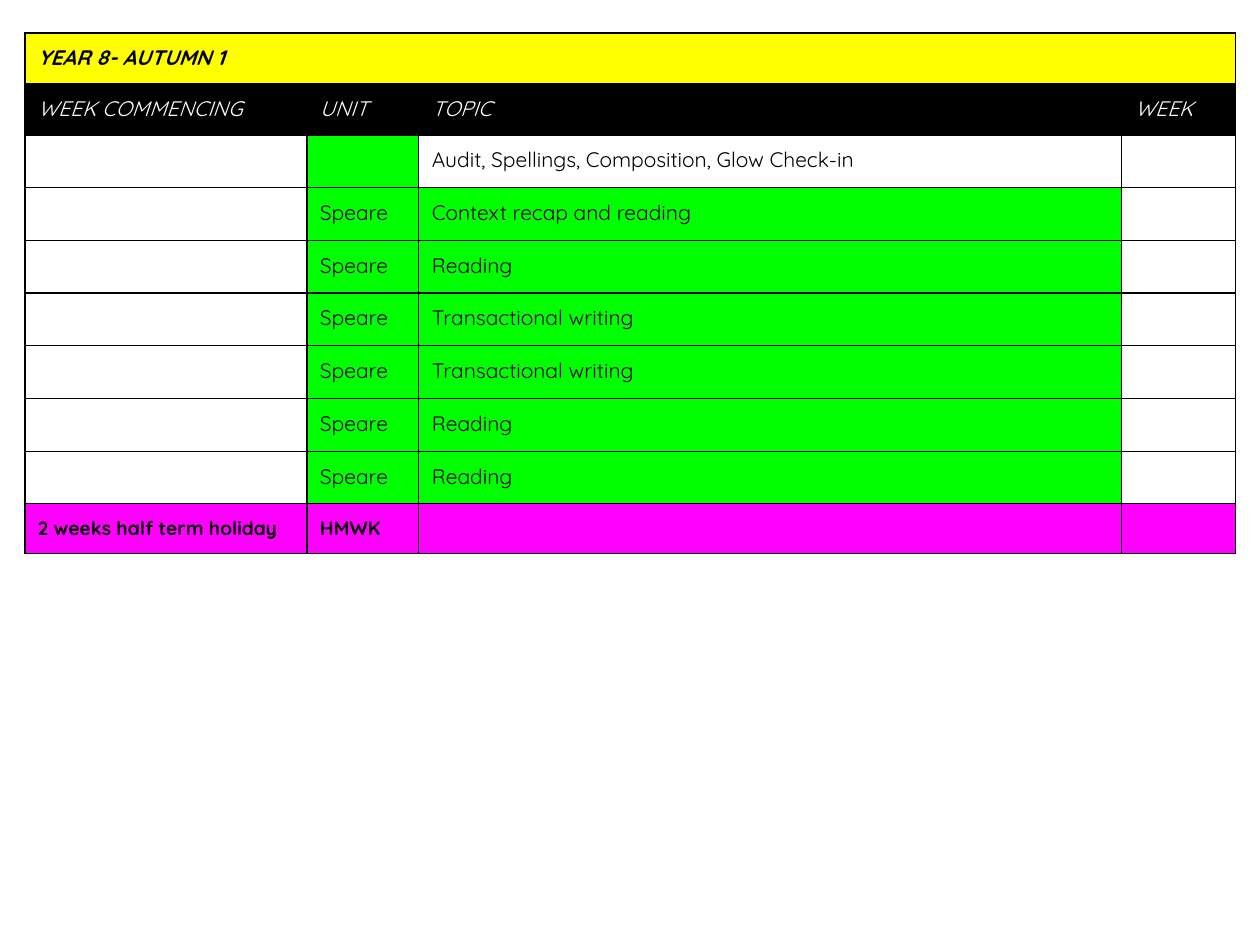
from dataclasses import dataclass

from lxml import etree
from pptx import Presentation
from pptx.dml.color import RGBColor
from pptx.oxml.ns import qn
from pptx.util import Emu, Pt

PX_PER_INCH = 126
BLANK_LAYOUT = 6


@dataclass(frozen=True)
class Theme:
    font: str = "Quicksand"
    black: str = "000000"
    white: str = "FFFFFF"
    yellow: str = "FFFF00"
    green: str = "00FF00"
    magenta: str = "FF00FF"
    body_size: float = 12
    holiday_size: float = 11
    border_width: float = 0.75


THEME = Theme()
COLUMN_WIDTHS = [282, 112, 703, 114]
TITLE_HEIGHT, HEADER_HEIGHT, HOLIDAY_HEIGHT = 51, 51, 50
SIDE_MARGIN, TEXT_MARGIN = 13, 12

TITLE = "YEAR 8- AUTUMN 1"
HEADERS = ["WEEK COMMENCING", "UNIT", "TOPIC", "WEEK"]
FIRST_TOPIC = "Audit, Spellings, Composition, Glow Check-in"
UNIT = "Speare"
TOPICS = ["Context recap and reading", "Reading", "Transactional writing",
          "Transactional writing", "Reading", "Reading"]
HOLIDAY = ["2 weeks half term holiday", "HMWK", "", ""]

# Text formats by type of row
TITLE_FORMAT = {"size": Pt(THEME.body_size), "bold": True, "italic": True}
HEADER_FORMAT = {"size": Pt(THEME.body_size), "bold": False, "italic": True}
WEEK_FORMAT = {"size": Pt(THEME.body_size), "bold": False, "italic": False}
HOLIDAY_FORMAT = {"size": Pt(THEME.holiday_size), "bold": True, "italic": False}


def px(n):
    return Emu(round(n * 914400 / PX_PER_INCH))


def add_borders(cell):
    """Draw a thin black line on all four sides of a cell."""
    tcPr = cell._tc.get_or_add_tcPr()
    for i, side in enumerate(("lnL", "lnR", "lnT", "lnB")):
        line = etree.Element(qn(f"a:{side}"), w=str(Pt(THEME.border_width)))
        fill = etree.SubElement(line, qn("a:solidFill"))
        etree.SubElement(fill, qn("a:srgbClr"), val=THEME.black)
        tcPr.insert(i, line)


def fill_cell(cell, text, fill, color, text_format):
    if fill:
        cell.fill.solid()
        cell.fill.fore_color.rgb = RGBColor.from_string(fill)
    else:
        cell.fill.background()
    add_borders(cell)

    # Empty cells need no vertical margin, so they never stretch their row
    cell.margin_left = cell.margin_right = px(SIDE_MARGIN)
    cell.margin_top = cell.margin_bottom = px(TEXT_MARGIN if text else 0)
    if text:
        r = cell.text_frame.paragraphs[0].add_run()
        r.text = text
        r.font.name = THEME.font
        r.font.color.rgb = RGBColor.from_string(color)
        for name, value in text_format.items():
            setattr(r.font, name, value)


def schedule_rows():
    """List each row as texts, fills, text colour and text format."""
    t = THEME
    week_fills = [None, t.green, t.green, None]
    rows = [
        ([TITLE, "", "", ""], [t.yellow] * 4, t.black, TITLE_FORMAT),
        (HEADERS, [t.black] * 4, t.white, HEADER_FORMAT),
        (["", "", FIRST_TOPIC, ""], [None, t.green, t.white, None],
         t.black, WEEK_FORMAT),
    ]
    rows += [(["", UNIT, topic, ""], week_fills, t.black, WEEK_FORMAT)
             for topic in TOPICS]
    rows.append((HOLIDAY, [t.magenta] * 4, t.black, HOLIDAY_FORMAT))
    return rows


def add_schedule(s, left, top, width, height):
    rows = schedule_rows()
    frame = s.shapes.add_table(len(rows), len(COLUMN_WIDTHS),
                               px(left), px(top), px(width), px(height))
    table = frame.table
    table.first_row = table.horz_banding = False

    # Columns share the box width; week rows share the height that is left
    scale = width / sum(COLUMN_WIDTHS)
    for column, w in zip(table.columns, COLUMN_WIDTHS):
        column.width = px(w * scale)
    week_count = len(rows) - 3
    week_height = (height - TITLE_HEIGHT - HEADER_HEIGHT - HOLIDAY_HEIGHT) / week_count
    heights = [TITLE_HEIGHT, HEADER_HEIGHT, *[week_height] * week_count, HOLIDAY_HEIGHT]
    for row, h in zip(table.rows, heights):
        row.height = px(h)

    for i, (texts, fills, color, text_format) in enumerate(rows):
        for j, (text, fill) in enumerate(zip(texts, fills)):
            fill_cell(table.cell(i, j), text, fill, color, text_format)

    # Title row spans the table
    table.cell(0, 0).merge(table.cell(0, len(COLUMN_WIDTHS) - 1))


def main():
    prs = Presentation()
    prs.slide_width, prs.slide_height = px(1260), px(945)
    s = prs.slides.add_slide(prs.slide_layouts[BLANK_LAYOUT])
    add_schedule(s, left=25, top=33, width=1211, height=521)
    prs.save("out.pptx")


if __name__ == "__main__":
    main()
